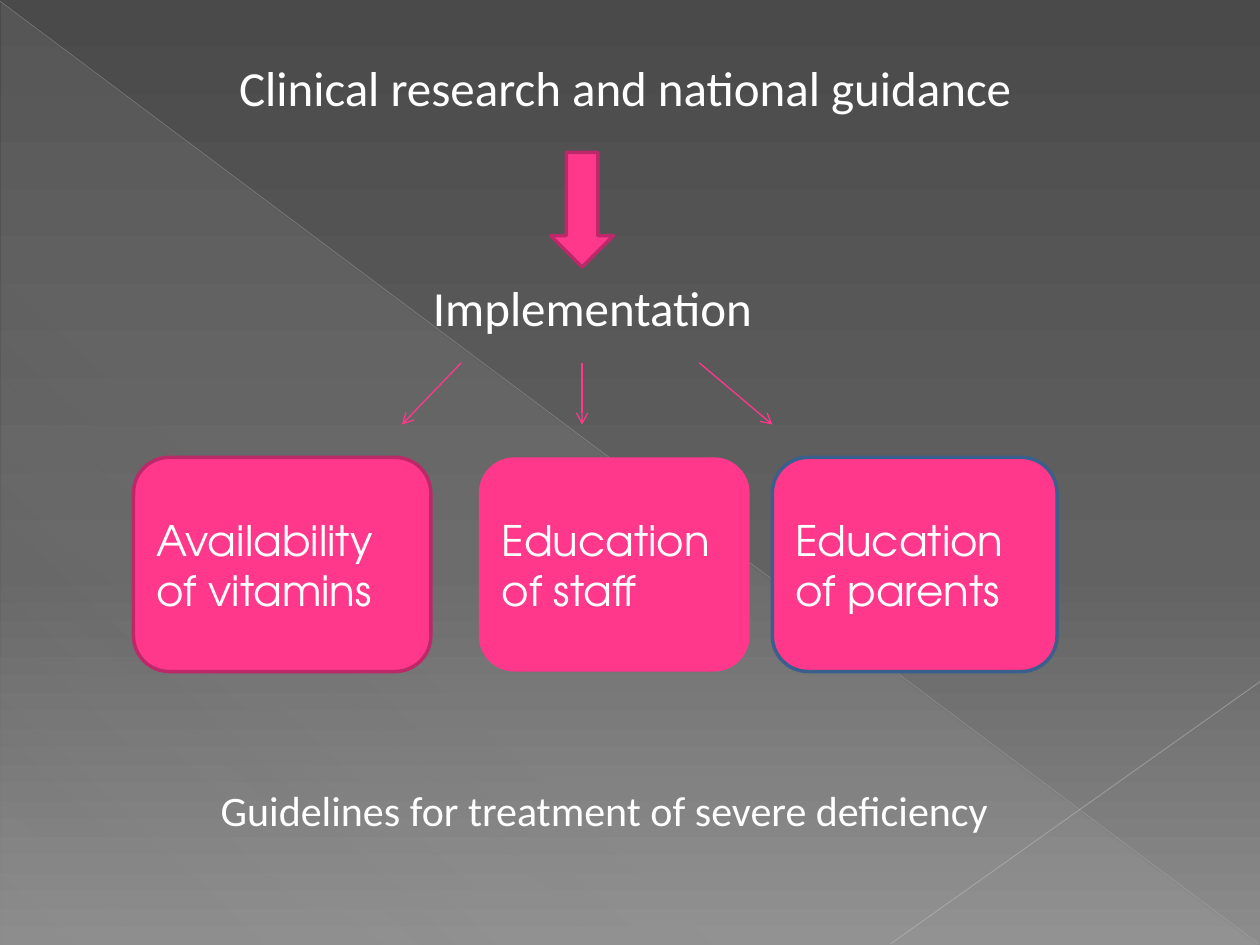
"""Build a slide showing how research and guidance lead to three areas of implementation."""
from lxml import etree
from pptx import Presentation
from pptx.dml.color import RGBColor
from pptx.enum.shapes import MSO_CONNECTOR, MSO_SHAPE
from pptx.enum.text import MSO_ANCHOR, PP_ALIGN
from pptx.oxml.ns import qn
from pptx.util import Pt

STRAIGHT = MSO_CONNECTOR.STRAIGHT
TRIANGLE, DOWN_ARROW = MSO_SHAPE.RIGHT_TRIANGLE, MSO_SHAPE.DOWN_ARROW
ROUNDED = MSO_SHAPE.ROUNDED_RECTANGLE
MIDDLE, LEFT = MSO_ANCHOR.MIDDLE, PP_ALIGN.LEFT

COLORS = {
    "pink": "FF388C", "dark_pink": "BD2968", "blue": "3A5F8C", "white": "FFFFFF",
    "dark": "4A4A4A", "medium": "626262", "light": "8C8C8C",
    "pale": "D2D2D2", "diagonal": "BFBFBF", "corner": "C6C6C6",
}
BACKGROUND_STOPS = [(0, "dark", 100), (60, "medium", 100), (100, "light", 100)]
TRIANGLE_STOPS = [(0, "pale", 10), (70, "pale", 8), (100, "pale", 1)]
DECOR_LINES = [
    ((0, 0.72), (719.28, 539.28), "diagonal", 0.39, 35),
    ((720, 389.52), (509.04, 539.28), "corner", 0.47, 45),
]
LABELS = [
    ("Clinical research and national guidance", 129.6, 29.5, 460.8, 28),
    ("Implementation", 240.3, 155, 303.5, 28),
    ("Guidelines for treatment of severe deficiency", 119, 445, 466, 24),
]
BOX_TOP, BOX_HEIGHT = 261.36, 122.4
BOXES = [
    ("Availability of vitamins", 76.32, 169.92, "dark_pink"),
    ("Education of staff", 273.6, 154.8, None),
    ("Education of parents", 441.36, 162.72, "blue"),
]
ARROW_TOP, ARROW_BOTTOM = 207.36, 242.64
ARROWS = [(263.52, 229.68), (332.64, 332.64), (399.6, 441.36)]


def color(name):
    return RGBColor.from_string(COLORS[name])


def set_gradient(fill, element, stops, angle):
    fill.gradient()
    fill.gradient_angle = 360 - angle
    stop_list = next(element.iter(qn("a:gsLst")))
    for child in list(stop_list):
        stop_list.remove(child)
    for position, name, opacity in stops:
        stop = etree.SubElement(stop_list, qn("a:gs"), pos=str(position * 1000))
        shade = etree.SubElement(stop, qn("a:srgbClr"), val=COLORS[name])
        etree.SubElement(shade, qn("a:alpha"), val=str(opacity * 1000))


def add_shape(slide, kind, left, top, width, height, outline=None):
    shape = slide.shapes.add_shape(kind, Pt(left), Pt(top), Pt(width), Pt(height))
    shape.shadow.inherit = False
    shape.fill.solid()
    shape.fill.fore_color.rgb = color("pink")
    if outline:
        shape.line.color.rgb = color(outline)
        shape.line.width = Pt(2)
    else:
        shape.line.fill.background()
    return shape


def add_line(slide, start, end, name, width):
    line = slide.shapes.add_connector(STRAIGHT, *map(Pt, (*start, *end)))
    line.line.color.rgb = color(name)
    line.line.width = Pt(width)
    etree.SubElement(line.element.spPr, qn("a:effectLst"))
    return line


def write(shape, text, font, size):
    shape.text_frame.text = text
    paragraph = shape.text_frame.paragraphs[0]
    paragraph.alignment = LEFT
    run_font = paragraph.runs[0].font
    run_font.name, run_font.size = font, Pt(size)
    run_font.color.rgb = color("white")


def main():
    presentation = Presentation()
    presentation.slide_width, presentation.slide_height = Pt(720), Pt(540)
    slide = presentation.slides.add_slide(presentation.slide_layouts[6])
    set_gradient(slide.background.fill, slide.element, BACKGROUND_STOPS, 90)

    triangle = add_shape(slide, TRIANGLE, 0.72, 1.44, 718.56, 538.56)
    set_gradient(triangle.fill, triangle.element, TRIANGLE_STOPS, 133)
    for start, end, name, width, opacity in DECOR_LINES:
        line = add_line(slide, start, end, name, width)
        shade = next(line.element.spPr.iter(qn("a:srgbClr")))
        etree.SubElement(shade, qn("a:alpha"), val=str(opacity * 1000))

    add_shape(slide, DOWN_ARROW, 314.64, 87.12, 36, 65.52, "dark_pink")
    for text, left, width, outline in BOXES:
        box = add_shape(slide, ROUNDED, left, BOX_TOP, width, BOX_HEIGHT, outline)
        box.text_frame.vertical_anchor = MIDDLE
        box.text_frame.word_wrap = True
        write(box, text, "TeX Gyre Adventor", 24)

    for text, left, top, width, size in LABELS:
        label = slide.shapes.add_textbox(Pt(left), Pt(top), Pt(width), Pt(size * 1.22 + 7.2))
        label.text_frame.word_wrap = True
        write(label, text, "Calibri", size)

    for start_x, end_x in ARROWS:
        arrow = add_line(slide, (start_x, ARROW_TOP), (end_x, ARROW_BOTTOM), "pink", 0.75)
        etree.SubElement(arrow.line._get_or_add_ln(), qn("a:tailEnd"), type="arrow")

    presentation.save("out.pptx")


if __name__ == "__main__":
    main()
